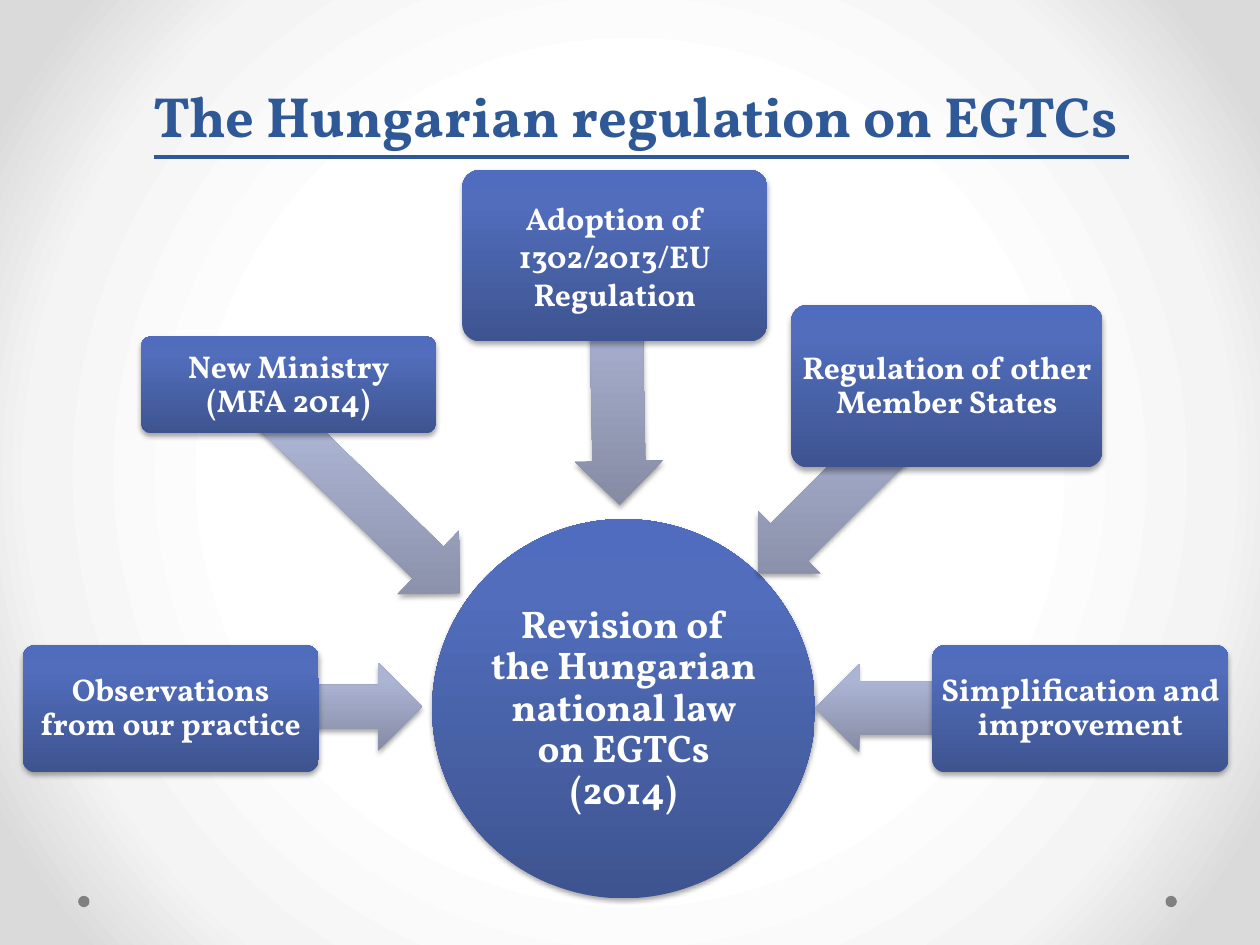
import dataclasses

import pptx
import pptx.dml.color
import pptx.enum.shapes
import pptx.enum.text
import pptx.oxml
import pptx.oxml.ns
import pptx.util

SHAPE = pptx.enum.shapes.MSO_SHAPE
ANCHOR = pptx.enum.text.MSO_ANCHOR
COLUMNS, ROWS = 100, 75
CELL = pptx.util.Inches(0.1)


@dataclasses.dataclass(frozen=True)
class Theme:
    font: str = "Vollkorn"
    heading: str = "2F5897"
    text: str = "FFFFFF"
    dot: str = "808080"
    backdrop: tuple = ((50, "FFFFFF"), (76, "F4F4F4"), (92, "DADADA"))
    block: tuple = ((0, "3E5490"), (80, "516DBB"), (100, "4F6CBE"))
    arrow: tuple = ((0, "858BA3"), (80, "ACB4D4"), (100, "ACB5D6"))
    title_size: float = 32.4
    title_leading: float = 58
    hub_size: float = 22
    box_size: float = 18


THEME = Theme()
TOP_DOWN = '<a:lin ang="16200000" scaled="0"/>'
RADIAL = (
    '<a:path path="circle">'
    '<a:fillToRect l="50000" t="50000" r="50000" b="50000"/></a:path>'
)
SHADOW = (
    '<a:outerShdw blurRad="39370" dist="22860" dir="5400000" rotWithShape="0">'
    '<a:srgbClr val="000000"><a:alpha val="35000"/></a:srgbClr></a:outerShdw>'
)

HUB = ("Revision of the Hungarian national law on EGTCs (2014)", (34.3, 41.2, 30.4, 30.1))
# Each factor: text, box on the grid, line spacing, arrow centre, length, turn, shaft share
FACTORS = (
    ("Observations\vfrom our practice", (1.8, 51.2, 23.5, 10.1), 0.9,
     (23.7, 56.1), 19.6, 180, 0.5),
    ("New Ministry (MFA 2014)", (11.2, 26.7, 23.4, 7.7), 0.9,
     (29.1, 39.9), 20.6, 224.1, 0.5),
    ("Adoption of 1302/2013/EU Regulation", (36.7, 13.5, 24.2, 13.6), 1.0,
     (49, 30.2), 19.8, 268.9, 0.6),
    ("Regulation of other Member States", (62.8, 24.2, 24.7, 12.9), 0.9,
     (68, 37.7), 22.1, 315, 0.6),
    ("Simplification and\vimprovement", (74, 51.2, 23.5, 10.1), 0.9,
     (75.8, 56.2), 22.2, 0, 0.6),
)
ARROW_BREADTH = 7
DOT_SIZE = 0.9


def set_all(target, values):
    for name, value in values.items():
        setattr(target, name, value)


def on_grid(area):
    return [round(length * CELL) for length in area]


def colour(code):
    return pptx.dml.color.RGBColor.from_string(code)


def drawing_xml(tag, attributes, content):
    namespace = pptx.oxml.ns.nsdecls("a")
    return pptx.oxml.parse_xml(f"<a:{tag} {namespace} {attributes}>{content}</a:{tag}>")


def paint_gradient(owner, element, stops, direction):
    owner.fill.gradient()
    plain = element.xpath(".//a:gradFill")[0]
    listed = "".join(
        f'<a:gs pos="{share * 1000}"><a:srgbClr val="{code}"/></a:gs>'
        for share, code in stops
    )
    gradient = drawing_xml(
        "gradFill", 'rotWithShape="0"', f"<a:gsLst>{listed}</a:gsLst>{direction}"
    )
    plain.getparent().replace(plain, gradient)


def write(frame, text, size, spacing, frame_format, **font_format):
    set_all(frame, {"word_wrap": True, **frame_format})
    frame.text = text
    paragraph = frame.paragraphs[0]
    set_all(paragraph, {
        "alignment": pptx.enum.text.PP_ALIGN.CENTER,
        "line_spacing": spacing,
    })
    for run in paragraph.runs:
        set_all(run.font, {
            "name": THEME.font, "size": pptx.util.Pt(size), "bold": True, **font_format,
        })
        run.font.color.rgb = colour(font_format and THEME.heading or THEME.text)


def add_plain(slide, kind, area):
    shape = slide.shapes.add_shape(kind, *on_grid(area))
    shape.shadow.inherit = False
    shape.line.fill.background()
    return shape


def add_raised(slide, kind, area, stops):
    shape = add_plain(slide, kind, area)
    paint_gradient(shape, shape.element, stops, TOP_DOWN)
    flat = shape.element.xpath("./p:spPr/a:effectLst")[0]
    flat.getparent().replace(flat, drawing_xml("effectLst", "", SHADOW))
    return shape


def add_block(slide, kind, area, text, size, spacing, inset):
    block = add_raised(slide, kind, area, THEME.block)
    sides = ("margin_left", "margin_top", "margin_right", "margin_bottom")
    frame_format = dict.fromkeys(sides, pptx.util.Inches(inset))
    frame_format["vertical_anchor"] = ANCHOR.MIDDLE
    write(block.text_frame, text, size, spacing, frame_format)
    return block


def add_arrow(slide, centre, length, turn, shaft):
    column, row = centre
    area = (column - length / 2, row - ARROW_BREADTH / 2, length, ARROW_BREADTH)
    arrow = add_raised(slide, SHAPE.LEFT_ARROW, area, THEME.arrow)
    arrow.adjustments[0] = shaft
    arrow.rotation = turn


def add_factor(slide, text, area, spacing, *arrow):
    add_arrow(slide, *arrow)
    box = add_block(
        slide, SHAPE.ROUNDED_RECTANGLE, area, text, THEME.box_size, spacing, 0.04
    )
    box.adjustments[0] = 0.1


def add_dot(slide, column):
    dot = add_plain(slide, SHAPE.OVAL, (column, 71.1, DOT_SIZE, DOT_SIZE))
    dot.fill.solid()
    dot.fill.fore_color.rgb = colour(THEME.dot)


def set_title(slide, text):
    title = slide.shapes.title
    edges = ("left", "top", "width", "height")
    set_all(title, dict(zip(edges, on_grid((5.9, 5.2, 90, 7.1)))))
    frame_format = {
        "vertical_anchor": ANCHOR.BOTTOM,
        "auto_size": pptx.enum.text.MSO_AUTO_SIZE.NONE,
    }
    write(title.text_frame, text, THEME.title_size,
          pptx.util.Pt(THEME.title_leading), frame_format, underline=True)


def main():
    deck = pptx.Presentation()
    set_all(deck, {"slide_width": COLUMNS * CELL, "slide_height": ROWS * CELL})
    slide = deck.slides.add_slide(deck.slide_layouts.get_by_name("Title Only"))
    paint_gradient(slide.background, slide.element, THEME.backdrop, RADIAL)
    for column in (92.5, 6.2):
        add_dot(slide, column)
    set_title(slide, "The Hungarian regulation on EGTCs ")
    hub_text, hub_area = HUB
    add_block(slide, SHAPE.OVAL, hub_area, hub_text, THEME.hub_size, 0.9, 0.02)
    for factor in FACTORS:
        add_factor(slide, *factor)
    deck.save("out.pptx")


if __name__ == "__main__":
    main()
